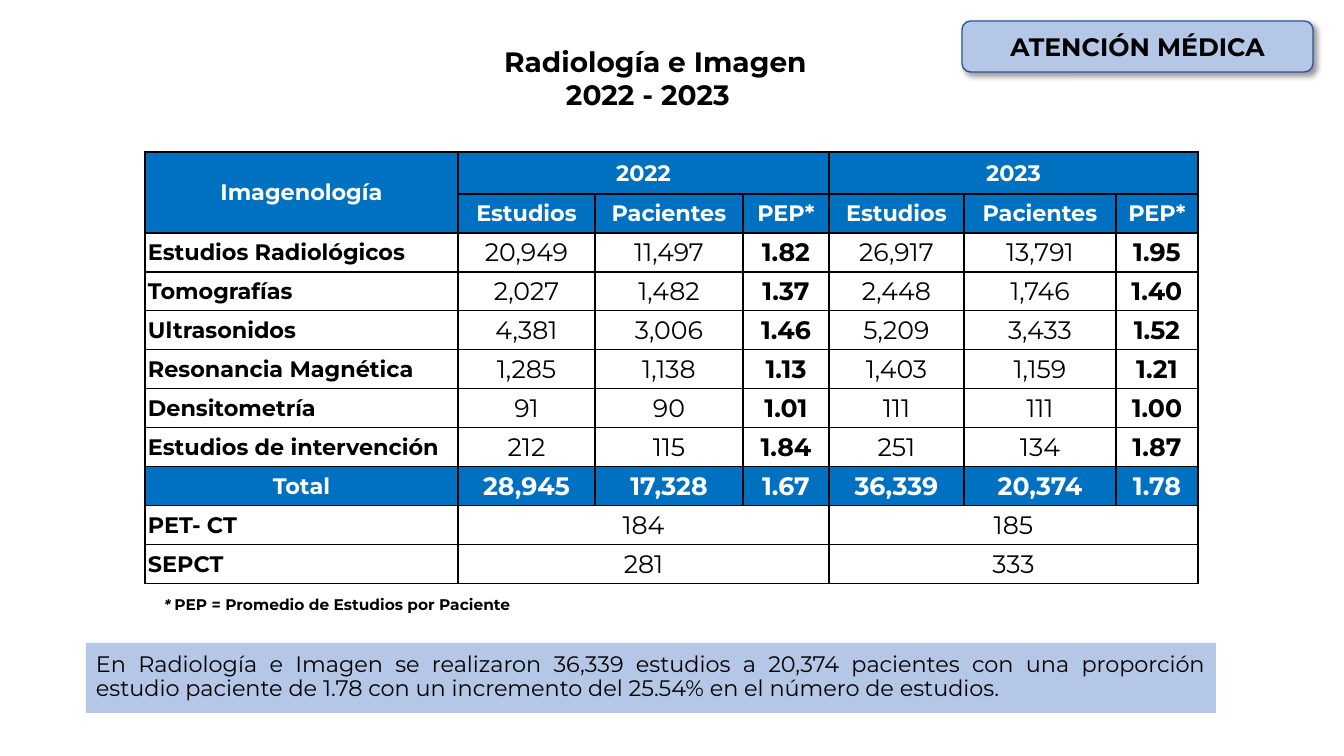
from lxml import etree
from pptx import Presentation
from pptx.dml.color import RGBColor
from pptx.enum.shapes import MSO_SHAPE
from pptx.enum.text import MSO_ANCHOR, PP_ALIGN
from pptx.oxml.ns import qn
from pptx.util import Pt

RECTANGLE, ROUNDED = MSO_SHAPE.RECTANGLE, MSO_SHAPE.ROUNDED_RECTANGLE
LEFT, CENTER, JUSTIFY = PP_ALIGN.LEFT, PP_ALIGN.CENTER, PP_ALIGN.JUSTIFY
TOP, MIDDLE = MSO_ANCHOR.TOP, MSO_ANCHOR.MIDDLE

TITLE = ["Radiología e Imagen", "2022 - 2023"]
BADGE = "ATENCIÓN MÉDICA"
FOOTNOTE = ("* ", "PEP = Promedio de Estudios por Paciente")
SUMMARY = (
    "En Radiología e Imagen se realizaron 36,339 estudios a 20,374 pacientes con una "
    "proporción estudio paciente de 1.78 con un incremento del 25.54% en el número de estudios."
)
YEARS = ["2022", "2023"]
MEASURES = ["Estudios", "Pacientes", "PEP*"]
STUDIES = [
    ("Estudios Radiológicos", "20,949", "11,497", "1.82", "26,917", "13,791", "1.95"),
    ("Tomografías", "2,027", "1,482", "1.37", "2,448", "1,746", "1.40"),
    ("Ultrasonidos", "4,381", "3,006", "1.46", "5,209", "3,433", "1.52"),
    ("Resonancia Magnética", "1,285", "1,138", "1.13", "1,403", "1,159", "1.21"),
    ("Densitometría", "91", "90", "1.01", "111", "111", "1.00"),
    ("Estudios de intervención", "212", "115", "1.84", "251", "134", "1.87"),
    ("Total", "28,945", "17,328", "1.67", "36,339", "20,374", "1.78"),
]
YEARLY = [("PET- CT", "184", "185"), ("SEPCT", "281", "333")]

COLORS = {"header": "0070C0", "panel": "B4C7E7", "outline": "2F5597",
          "black": "000000", "white": "FFFFFF"}
FONT = "Montserrat"
COLUMN_WIDTHS = [313, 137, 148, 86, 135, 152, 82]
HEADER_HEIGHT, ROW_HEIGHT = 42, 39
TABLE_LEFT, TABLE_TOP = 145, 152
HEADER_ROWS = 2
SPAN = len(MEASURES)


def px(length):
    return round(length * 914400 / 100.8)


def place(*lengths):
    return [px(length) for length in lengths]


def rgb(name):
    return RGBColor.from_string(COLORS[name])


def write(para, text, size=16, color="black", bold=False, italic=False, align=LEFT, spacing=1.0):
    para.alignment = align
    para.line_spacing = spacing
    span = para.add_run()
    span.text = text
    span.font.name = FONT
    span.font.size = Pt(size)
    span.font.bold = bold
    span.font.italic = italic
    span.font.color.rgb = rgb(color)


def set_frame(frame, anchor=TOP, inset_x=10, inset_y=10):
    frame.word_wrap = True
    frame.vertical_anchor = anchor
    frame.margin_left = frame.margin_right = px(inset_x)
    frame.margin_top = frame.margin_bottom = px(inset_y)


def add_panel(page, kind, box, outline=None):
    panel = page.shapes.add_shape(kind, *place(*box))
    panel.shadow.inherit = False
    panel.fill.solid()
    panel.fill.fore_color.rgb = rgb("panel")
    if outline:
        panel.line.color.rgb = rgb(outline)
        panel.line.width = Pt(1)
    else:
        panel.line.fill.background()
    return panel


def add_shadow(shape):
    effects = shape._element.spPr.find(qn("a:effectLst"))
    shadow = etree.SubElement(effects, qn("a:outerShdw"), blurRad=str(Pt(4)), dist=str(Pt(3)),
                              dir="2700000", algn="tl", rotWithShape="0")
    color = etree.SubElement(shadow, qn("a:srgbClr"), val=COLORS["black"])
    etree.SubElement(color, qn("a:alpha"), val="40000")


def add_borders(cell):
    properties = cell._tc.get_or_add_tcPr()
    for side in ("lnL", "lnR", "lnT", "lnB"):
        line = etree.SubElement(properties, qn("a:" + side), w=str(Pt(1)))
        fill = etree.SubElement(line, qn("a:solidFill"))
        etree.SubElement(fill, qn("a:srgbClr"), val=COLORS["black"])


def spread(label, values):
    """Put one value at the start of each year's group of columns."""
    return [label] + [text for value in values for text in [value] + [None] * (SPAN - 1)]


def add_studies_table(page):
    rows = [spread("Imagenología", YEARS), [None] + MEASURES * len(YEARS)]
    rows += STUDIES + [spread(label, values) for label, *values in YEARLY]
    heights = [HEADER_HEIGHT] + [ROW_HEIGHT] * (len(rows) - 1)
    box = place(TABLE_LEFT, TABLE_TOP, sum(COLUMN_WIDTHS), sum(heights))
    table = page.shapes.add_table(len(rows), len(COLUMN_WIDTHS), *box).table
    table.first_row = table.horz_banding = False
    for column, width in zip(table.columns, COLUMN_WIDTHS):
        column.width = px(width)
    for row, height in zip(table.rows, heights):
        row.height = px(height)

    for r, texts in enumerate(rows):
        is_header = r < HEADER_ROWS
        is_blue = is_header or texts[0] == "Total"
        for c, text in enumerate(texts):
            cell = table.cell(r, c)
            add_borders(cell)
            cell.fill.solid()
            cell.fill.fore_color.rgb = rgb("header" if is_blue else "white")
            cell.vertical_anchor = MIDDLE
            cell.margin_left = cell.margin_right = px(3)
            cell.margin_top = cell.margin_bottom = px(3)
            if text is None:
                continue
            is_label = c == 0
            is_ratio = c > 0 and c % SPAN == 0
            write(cell.text_frame.paragraphs[0], text,
                  size=16 if is_header or is_label else 18,
                  color="white" if is_blue else "black",
                  bold=is_blue or is_label or is_ratio,
                  align=LEFT if is_label and not is_blue else CENTER)
        if None in texts[1:]:
            for first in range(1, len(texts), SPAN):
                table.cell(r, first).merge(table.cell(r, first + SPAN - 1))
    table.cell(0, 0).merge(table.cell(HEADER_ROWS - 1, 0))


def add_title(page):
    title = page.shapes.title
    title.left, title.top, title.width, title.height = place(334, 44, 638, 68)
    frame = title.text_frame
    set_frame(frame, MIDDLE, inset_y=0)
    paras = [frame.paragraphs[0], frame.add_paragraph()]
    for para, text in zip(paras, TITLE):
        write(para, text, size=20, bold=True, align=CENTER)
    paras[0]._p.get_or_add_pPr().set("marL", str(px(5)))
    paras[1]._p.get_or_add_pPr().set("marR", str(px(15)))


def main():
    deck = Presentation()
    deck.slide_width, deck.slide_height = place(1344, 756)
    page = deck.slides.add_slide(deck.slide_layouts[5])
    add_title(page)
    add_studies_table(page)

    note = page.shapes.add_textbox(*place(154, 586, 638, 39)).text_frame
    set_frame(note)
    mark, meaning = FOOTNOTE
    write(note.paragraphs[0], mark, size=10.5, bold=True, italic=True)
    write(note.paragraphs[0], meaning, size=11, bold=True)

    summary = add_panel(page, RECTANGLE, (86, 643, 1130, 70)).text_frame
    set_frame(summary)
    write(summary.paragraphs[0], SUMMARY, align=JUSTIFY, spacing=0.9)

    badge = add_panel(page, ROUNDED, (962, 21, 351, 51), outline="outline")
    add_shadow(badge)
    set_frame(badge.text_frame, MIDDLE, inset_y=5)
    write(badge.text_frame.paragraphs[0], BADGE, size=18, bold=True, align=CENTER)
    deck.save("out.pptx")


if __name__ == "__main__":
    main()
